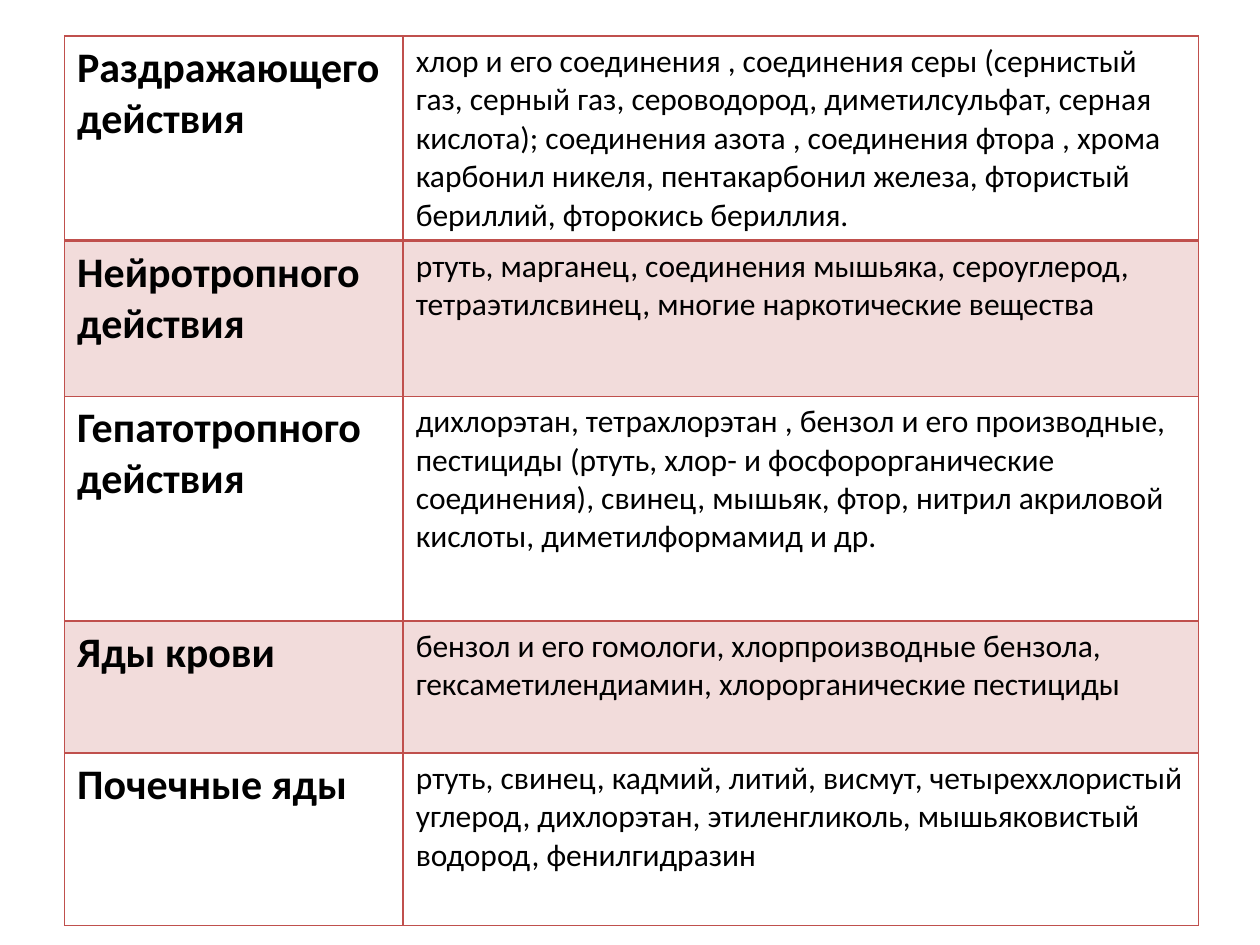
from lxml.etree import SubElement
from pptx import Presentation
from pptx.dml.color import RGBColor
from pptx.oxml.ns import qn
from pptx.util import Pt

POISONS = [
    ("Раздражающего действия",
     "хлор и его соединения , соединения серы (сернистый газ, серный газ, "
     "сероводород, диметилсульфат, серная кислота); соединения азота , "
     "соединения фтора , хрома карбонил никеля, пентакарбонил железа, "
     "фтористый бериллий, фторокись бериллия.", 113),
    ("Нейротропного действия",
     "ртуть, марганец, соединения мышьяка, сероуглерод, тетраэтилсвинец, "
     "многие наркотические вещества", 88.8),
    ("Гепатотропного действия",
     "дихлорэтан, тетрахлорэтан , бензол и его производные, пестициды "
     "(ртуть, хлор- и фосфорорганические соединения), свинец, мышьяк, фтор, "
     "нитрил акриловой кислоты, диметилформамид и др.", 128.4),
    ("Яды крови",
     "бензол и его гомологи, хлорпроизводные бензола, гексаметилендиамин, "
     "хлорорганические пестициды", 75.6),
    ("Почечные яды",
     "ртуть, свинец, кадмий, литий, висмут, четыреххлористый углерод, "
     "дихлорэтан, этиленгликоль, мышьяковистый водород, фенилгидразин", 98.6),
]


def color(code):
    return RGBColor.from_string(code)


class PoisonSlide:
    """Holds the style and the current slide, and draws its elements."""

    font = "Calibri"
    ink = "000000"
    accent = "C0504D"
    band_alpha = 20

    def __init__(self, slide):
        self.slide = slide

    def table(self, left, top, widths, entries):
        heights = [height for _, _, height in entries]
        table = self.slide.shapes.add_table(
            len(entries), len(widths), Pt(left), Pt(top),
            Pt(sum(widths)), Pt(sum(heights))).table
        table.first_row = False
        table.horz_banding = False
        for column, width in zip(table.columns, widths):
            column.width = Pt(width)
        for index, (group, substances, height) in enumerate(entries):
            table.rows[index].height = Pt(height)
            banded = index % 2 == 1
            top_line = 2 if index == 1 else 1
            bottom_line = 2 if index == 0 else 1
            borders = {"L": 1, "R": 1, "T": top_line, "B": bottom_line}
            for cell, text, size, bold in zip(
                    table.rows[index].cells, (group, substances),
                    (24, 18), (True, False)):
                self.text(cell, text, size, bold)
                self.borders(cell, borders)
                self.fill(cell, banded)

    def text(self, cell, text, size, bold):
        run = cell.text_frame.paragraphs[0].add_run()
        run.text = text
        run.font.name = self.font
        run.font.size = Pt(size)
        run.font.bold = bold
        run.font.color.rgb = color(self.ink)

    def borders(self, cell, widths):
        properties = cell._tc.get_or_add_tcPr()
        for side, width in widths.items():
            line = SubElement(properties, qn(f"a:ln{side}"), w=str(Pt(width)))
            paint = SubElement(line, qn("a:solidFill"))
            SubElement(paint, qn("a:srgbClr"), val=self.accent)

    def fill(self, cell, banded):
        if not banded:
            cell.fill.background()
            return
        cell.fill.solid()
        cell.fill.fore_color.rgb = color(self.accent)
        paint = cell._tc.tcPr.find(qn("a:solidFill")).find(qn("a:srgbClr"))
        SubElement(paint, qn("a:alpha"), val=str(self.band_alpha * 1000))


def main():
    deck = Presentation()
    deck.slide_width, deck.slide_height = Pt(720), Pt(540)
    page = PoisonSlide(deck.slides.add_slide(deck.slide_layouts[6]))
    page.table(36.9, 20.6, (193.5, 454.5), POISONS)
    deck.save("out.pptx")


if __name__ == "__main__":
    main()
